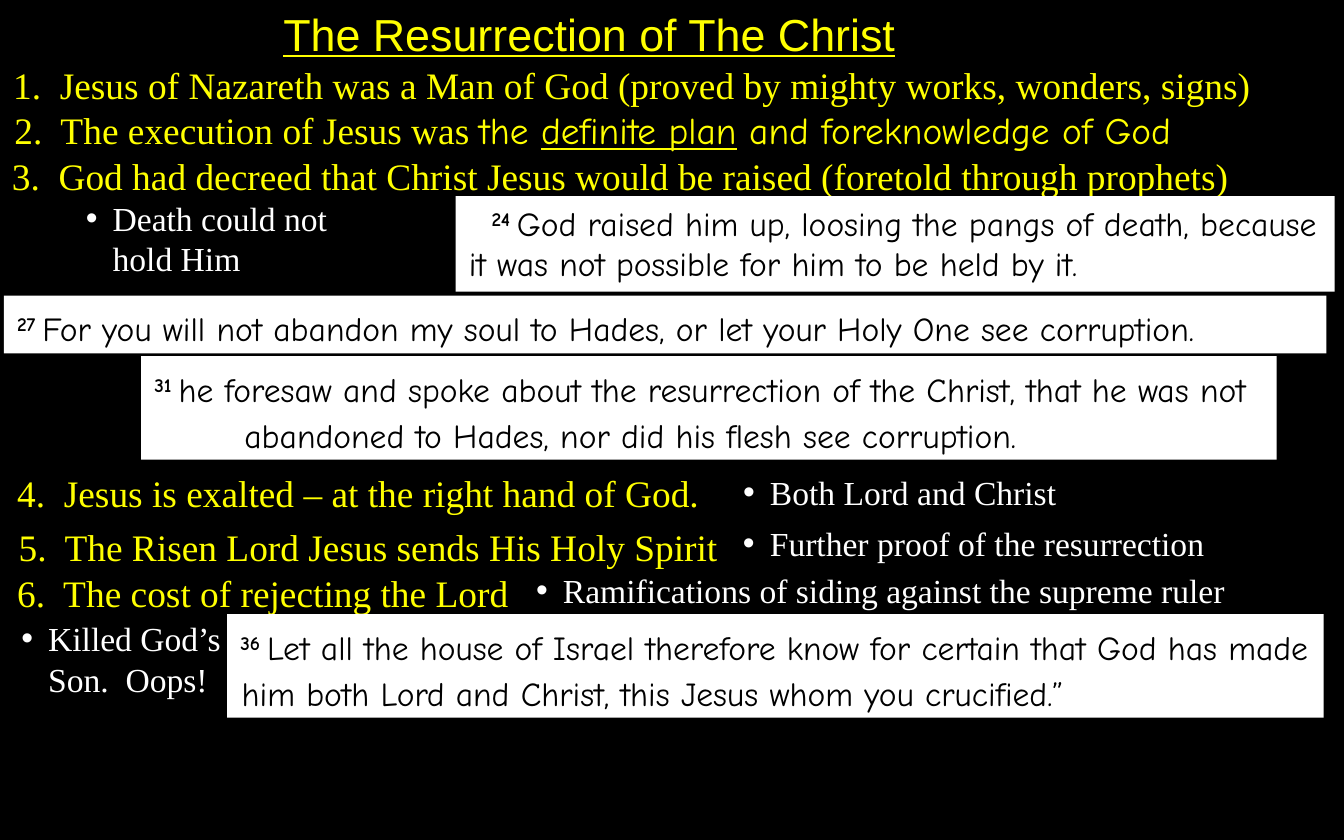
from dataclasses import dataclass

from lxml import etree
from pptx import Presentation
from pptx.dml.color import RGBColor
from pptx.enum.shapes import MSO_SHAPE
from pptx.enum.text import MSO_ANCHOR, MSO_AUTO_SIZE, PP_ALIGN
from pptx.oxml.ns import qn
from pptx.util import Inches, Pt

RECTANGLE = MSO_SHAPE.RECTANGLE
TOP = MSO_ANCHOR.TOP
LEFT = PP_ALIGN.LEFT
GROW = MSO_AUTO_SIZE.SHAPE_TO_FIT_TEXT


@dataclass(frozen=True)
class Theme:
    black: RGBColor = RGBColor(0, 0, 0)
    white: RGBColor = RGBColor(255, 255, 255)
    yellow: RGBColor = RGBColor(255, 255, 0)
    title_font: str = "Arial"
    body_font: str = "Times New Roman"
    verse_font: str = "Comic Neue"
    title_size: Pt = Pt(24)
    point_size: Pt = Pt(20)
    note_size: Pt = Pt(18)


theme = Theme()
title_format = {"name": theme.title_font, "size": theme.title_size,
                "color": theme.yellow, "underline": True}
point_format = {"name": theme.body_font, "size": theme.point_size, "color": theme.yellow}
quote_format = {**point_format, "name": theme.verse_font}
note_format = {"name": theme.body_font, "size": theme.note_size, "color": theme.white}
verse_format = {"name": theme.verse_font, "size": theme.note_size,
                "color": theme.black, "bold": False}
number_format = {**verse_format, "bold": True}


def fill_text(shape, runs, margin, indent):
    """Write (text, format) runs as one paragraph and return it."""
    frame = shape.text_frame
    frame.word_wrap = True
    frame.auto_size = GROW
    frame.vertical_anchor = TOP
    paragraph = frame.paragraphs[0]
    paragraph.alignment = LEFT
    properties = paragraph._p.get_or_add_pPr()
    properties.set("marL", str(Inches(margin)))
    properties.set("indent", str(Inches(indent)))
    for text, run_format in runs:
        run = paragraph.add_run()
        run.text = text
        for attribute, value in run_format.items():
            if attribute == "color":
                run.font.color.rgb = value
            else:
                setattr(run.font, attribute, value)
    return paragraph


presentation = Presentation()
presentation.slide_width = Inches(10)
presentation.slide_height = Inches(6.25)
slide = presentation.slides.add_slide(presentation.slide_layouts[6])
slide.background.fill.solid()
slide.background.fill.fore_color.rgb = theme.black

# Title and numbered points: left, top, width, height, runs
headings = [
    (2.01, 0, 4.97, 0.5, [("The Resurrection of The Christ", title_format)]),
    (0, 0.41, 10, 0.44, [
        ("1.  Jesus of Nazareth was a Man of God (proved by mighty works, wonders, signs)",
         point_format)]),
    (0.01, 0.75, 10, 0.44, [
        ("2.  The execution of Jesus was ", point_format),
        ("the ", quote_format),
        ("definite plan", {**quote_format, "underline": True}),
        (" and foreknowledge of God", quote_format)]),
    (-0.01, 1.09, 10, 0.44, [
        ("3.  God had decreed that Christ Jesus would be raised (foretold through prophets)",
         point_format)]),
    (0.03, 3.45, 5.46, 0.44, [
        ("4.  Jesus is exalted – at the right hand of God.", point_format)]),
    (0.04, 3.85, 6, 0.44, [
        ("5.  The Risen Lord Jesus sends His Holy Spirit", point_format)]),
    (0.03, 4.19, 6.39, 0.44, [("6.  The cost of rejecting the Lord", point_format)]),
]
for left, top, width, height, runs in headings:
    box = slide.shapes.add_textbox(Inches(left), Inches(top), Inches(width), Inches(height))
    fill_text(box, runs, 0.39, -0.39)

# Verses: left, top, width, height, margin, indent, line spacing, number, text
verses = [
    (3.39, 1.46, 6.54, 0.71, 0, 0.17, None, "24 ",
     "God raised him up, loosing the pangs of death, because it was not possible "
     "for him to be held by it."),
    (0.03, 2.2, 9.84, 0.43, 0.67, -0.67, 1.15, "27 ",
     "For you will not abandon my soul to Hades, or let your Holy One see corruption."),
    (1.05, 2.65, 8.45, 0.77, 0.67, -0.67, 1.15, "31 ",
     "he foresaw and spoke about the resurrection of the Christ, that he was not "
     "abandoned to Hades, nor did his flesh see corruption."),
    (1.69, 4.57, 8.16, 0.77, 0.01, -0.01, 1.15, "36 ",
     "Let all the house of Israel therefore know for certain that God has made him "
     "both Lord and Christ, this Jesus whom you crucified.”"),
]
for left, top, width, height, margin, indent, spacing, number, text in verses:
    panel = slide.shapes.add_shape(
        RECTANGLE, Inches(left), Inches(top), Inches(width), Inches(height))
    panel.shadow.inherit = False
    panel.fill.solid()
    panel.fill.fore_color.rgb = theme.white
    panel.line.fill.background()
    paragraph = fill_text(
        panel, [(number, number_format), (text, verse_format)], margin, indent)
    paragraph.runs[0]._r.get_or_add_rPr().set("baseline", "30000")
    if spacing:
        paragraph.line_spacing = spacing
        tabs = etree.SubElement(paragraph._p.get_or_add_pPr(), qn("a:tabLst"))
        for position, alignment in ((0.14, "r"), (0.28, "l")):
            etree.SubElement(tabs, qn("a:tab"), pos=str(Inches(position)), algn=alignment)

# Bulleted remarks: left, top, width, height, text
remarks = [
    (0.54, 1.42, 2.03, 0.71, "Death could not hold Him"),
    (5.43, 3.46, 2.65, 0.4, "Both Lord and Christ"),
    (5.43, 3.84, 4.24, 0.4, "Further proof of the resurrection"),
    (3.89, 4.19, 6.1, 0.4, "Ramifications of siding against the supreme ruler"),
    (0.06, 4.55, 1.89, 0.71, "Killed God’s Son.  Oops!"),
]
for left, top, width, height, text in remarks:
    box = slide.shapes.add_textbox(Inches(left), Inches(top), Inches(width), Inches(height))
    paragraph = fill_text(box, [(text, note_format)], 0.2, -0.2)
    properties = paragraph._p.get_or_add_pPr()
    etree.SubElement(properties, qn("a:buFont"), typeface=theme.title_font)
    etree.SubElement(properties, qn("a:buChar"), char="•")

presentation.save("out.pptx")
